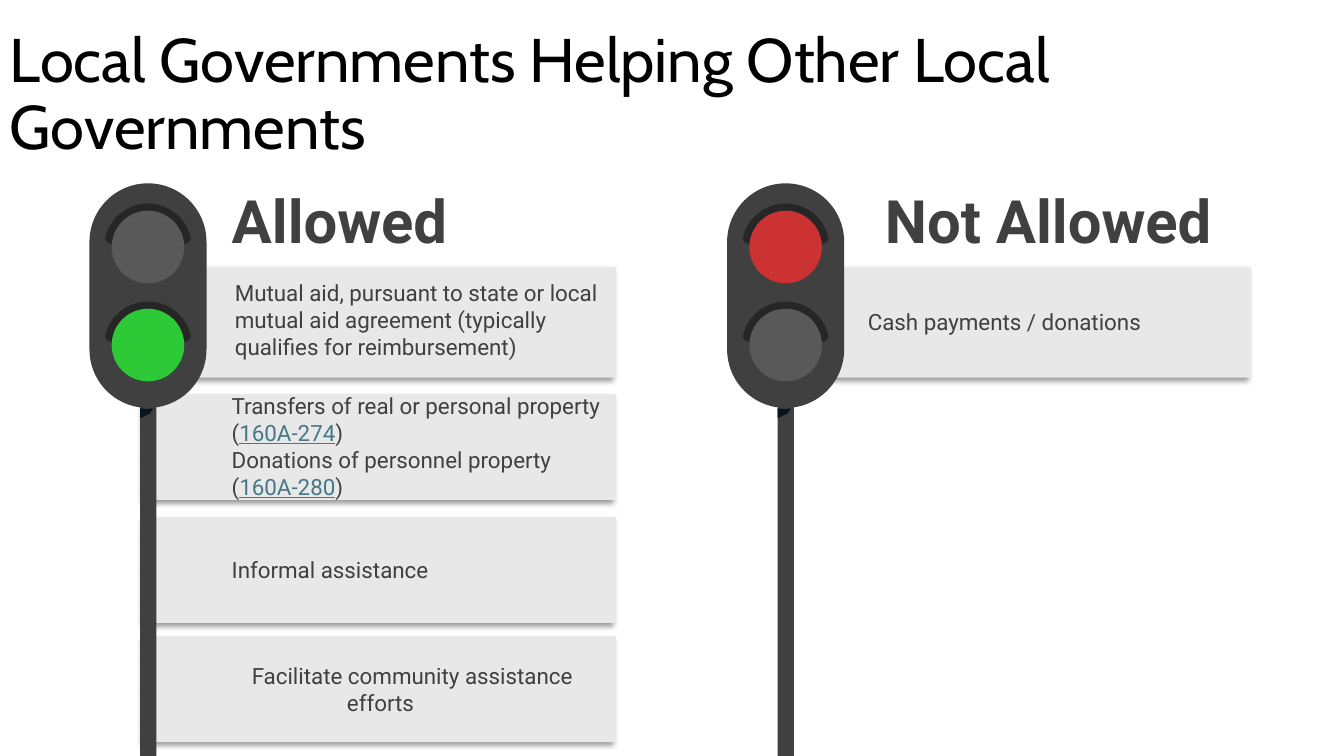
from lxml.etree import SubElement
from pptx import Presentation
from pptx.dml.color import RGBColor
from pptx.enum.shapes import MSO_SHAPE
from pptx.enum.text import MSO_ANCHOR, PP_ALIGN
from pptx.oxml.ns import qn
from pptx.util import Cm, Pt

BLACK = RGBColor(0x00, 0x00, 0x00)
CHARCOAL = RGBColor(0x40, 0x40, 0x40)
VISOR = RGBColor(0x26, 0x26, 0x26)
UNLIT = RGBColor(0x59, 0x59, 0x59)
GREEN = RGBColor(0x2D, 0xC9, 0x37)
RED = RGBColor(0xCC, 0x32, 0x32)
NAVY = RGBColor(0x07, 0x14, 0x20)
CARD = RGBColor(0xE8, 0xE8, 0xE8)
LINK = RGBColor(0x46, 0x78, 0x86)

LAMP_STEP = 2.47
CARD_ROWS = [(6.73, 2.79), (9.93, 2.67), (13.03, 2.67), (16.03, 2.67)]
VISOR_CURVE = [(1.08, 0.89), (0.99, 0.38), (0.53, 0), (0, 0)]
FOOT = [(0, 0), (0.18, 0.02), (0.33, 0), (0.25, 0.13), (0, 0.25)]


def paint(shape, color):
    """Give a shape a flat fill without outline or shadow."""
    shape.fill.solid()
    shape.fill.fore_color.rgb = color
    shape.line.fill.background()
    shape.shadow.inherit = False
    return shape


def add_preset(shapes, preset, left, top, width, height, color):
    """Add a flat preset shape."""
    return paint(shapes.add_shape(preset, Cm(left), Cm(top), Cm(width), Cm(height)), color)


def add_outline(shapes, left, top, points, color):
    """Add a closed outline from points relative to a corner."""
    corners = [(Cm(left + x), Cm(top + y)) for x, y in points]
    builder = shapes.build_freeform(*corners[0])
    builder.add_line_segments(corners[1:], close=True)
    return paint(builder.convert_to_shape(), color)


def style(paragraph, size, color=CHARCOAL, face="Roboto", bold=False):
    """Set the font of a paragraph."""
    font = paragraph.font
    font.name, font.size, font.bold = face, Pt(size), bold
    font.color.rgb = color


def add_text(slide, left, top, width, height, lines, size=16, bold=False):
    """Add text without margins; odd pieces of a line look like links."""
    frame = slide.shapes.add_textbox(Cm(left), Cm(top), Cm(width), Cm(height)).text_frame
    frame.word_wrap = True
    frame.margin_left = frame.margin_right = frame.margin_top = frame.margin_bottom = 0
    for index, pieces in enumerate(lines):
        paragraph = frame.add_paragraph() if index else frame.paragraphs[0]
        style(paragraph, size, bold=bold)
        for position, piece in enumerate(pieces):
            run = paragraph.add_run()
            run.text = piece
            if position % 2:
                run.font.underline = True
                run.font.color.rgb = LINK


def add_title(slide, wording):
    """Add the slide title."""
    frame = slide.shapes.add_textbox(0, Cm(0.58), Cm(34.26), Cm(3.68)).text_frame
    frame.word_wrap = True
    frame.vertical_anchor = MSO_ANCHOR.MIDDLE
    heading = frame.paragraphs[0]
    heading.text = wording
    heading.line_spacing = 0.9
    style(heading, 44, BLACK, "Cabin")


def add_card(slide, left, row):
    """Add a grey card with a soft shadow."""
    top, height = CARD_ROWS[row]
    card = add_preset(slide.shapes, MSO_SHAPE.RECTANGLE, left, top, 11.86, height, CARD)
    effects = card.element.spPr.find(qn("a:effectLst"))
    shadow = SubElement(effects, qn("a:outerShdw"), blurRad=str(Pt(4)), dist=str(Pt(3)),
                        dir="8100000", algn="tr", rotWithShape="0")
    tint = SubElement(shadow, qn("a:srgbClr"), val="000000")
    SubElement(tint, qn("a:alpha"), val="40000")
    return card


def label_card(card, wording):
    """Write centred text with an indented first line on a card."""
    frame = card.text_frame
    frame.word_wrap = True
    frame.vertical_anchor = MSO_ANCHOR.MIDDLE
    label = frame.paragraphs[0]
    label.text = wording
    label.alignment = PP_ALIGN.CENTER
    style(label, 16)
    properties = label._p.get_or_add_pPr()
    properties.set("marL", "0")
    properties.set("indent", str(Cm(1.6)))


def bezier(start, pull, push, end, steps=16):
    """Return points along a cubic curve."""
    points = []
    for step in range(steps + 1):
        t = step / steps
        weights = ((1 - t) ** 3, 3 * t * (1 - t) ** 2, 3 * t * t * (1 - t), t ** 3)
        points.append(tuple(sum(w * p[axis] for w, p in zip(weights, (start, pull, push, end)))
                            for axis in (0, 1)))
    return points


def add_traffic_light(slide, center, lamp_colors):
    """Add a traffic light with its upper and lower lamp colours."""
    parts = slide.shapes.add_group_shape().shapes
    body = add_preset(parts, MSO_SHAPE.ROUNDED_RECTANGLE, center - 1.475, 4.62, 2.95, 5.66, CHARCOAL)
    body.adjustments[0] = 0.5
    right = [(1.04, 0.97)] + bezier(*VISOR_CURVE)
    left = [(-x, y) for x, y in reversed(right[:-1])]
    for row in range(2):
        add_outline(parts, center, 5.13 + row * LAMP_STEP, right + left + [(0, 1.42)], VISOR)
    add_preset(parts, MSO_SHAPE.RECTANGLE, center - 0.2, 10.06, 0.41, 8.99, CHARCOAL)
    for row, color in enumerate(lamp_colors):
        add_preset(parts, MSO_SHAPE.OVAL, center - 0.915, 5.31 + row * LAMP_STEP, 1.83, 1.83, color)
    add_outline(parts, center - 0.2, 10.29, FOOT, NAVY)


def main():
    """Build the slide and save it."""
    deck = Presentation()
    deck.slide_width, deck.slide_height = Cm(33.87), Cm(19.05)
    slide = deck.slides.add_slide(deck.slide_layouts[6])

    for row in range(3):
        add_card(slide, 3.66, row)
    add_card(slide, 19.66, 0)
    add_title(slide, "Local Governments Helping Other Local Governments")
    add_text(slide, 5.84, 4.62, 6.32, 1.83, [["Allowed"]], 42.7, True)
    add_text(slide, 22.3, 4.62, 9.3, 1.83, [["Not Allowed"]], 42.7, True)
    add_text(slide, 5.92, 7.04, 9.45, 2.06, [[
        "Mutual aid, pursuant to state or local mutual aid agreement "
        "(typically qualifies for reimbursement)"]])
    add_text(slide, 5.84, 9.88, 9.53, 2.74, [
        ["Transfers of real or personal property (", "160A-274", ")"],
        ["Donations of personnel property (", "160A-280", ")"]])
    add_text(slide, 5.84, 14.02, 8.69, 0.69, [["Informal assistance"]])
    add_text(slide, 21.87, 7.77, 8.69, 0.69, [["Cash payments / donations"]])
    label_card(add_card(slide, 3.66, 3), "Facilitate community assistance efforts")
    add_traffic_light(slide, 3.73, (UNLIT, GREEN))
    add_traffic_light(slide, 19.8, (RED, UNLIT))
    deck.save("out.pptx")


if __name__ == "__main__":
    main()
